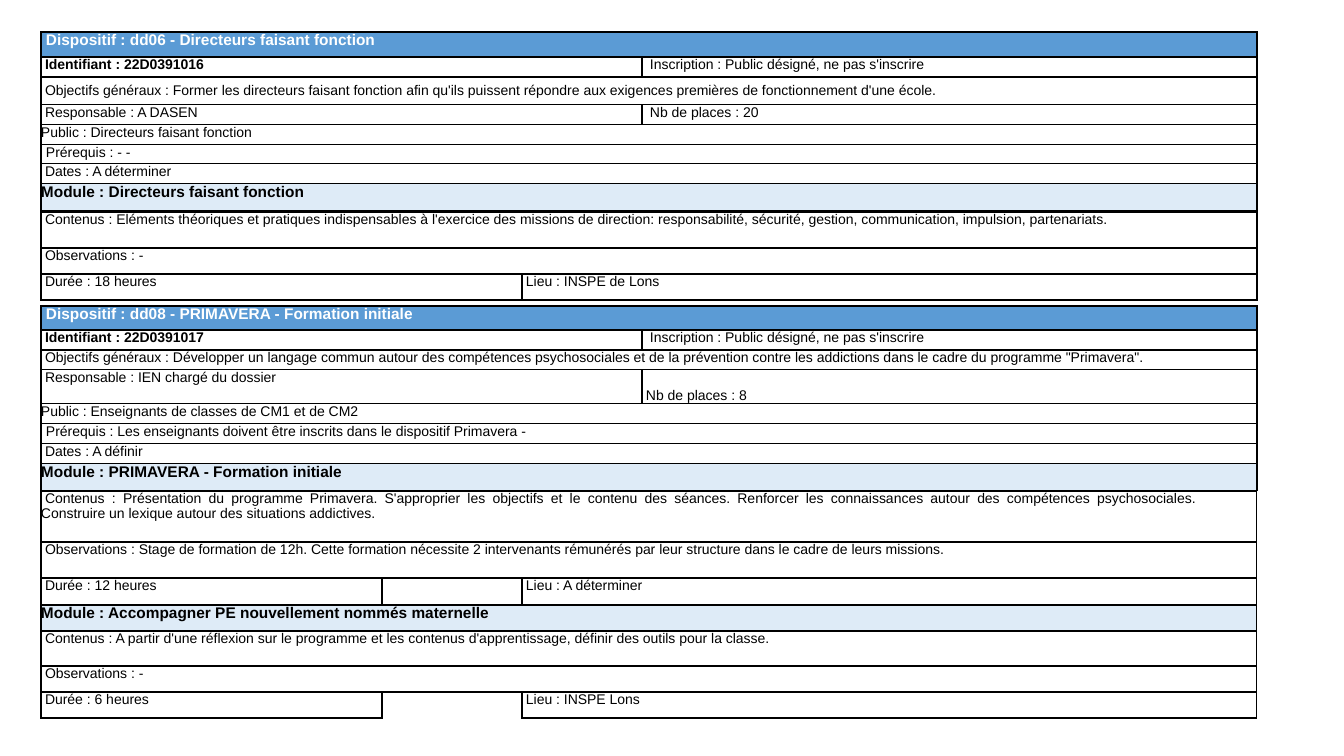
from lxml import etree
from pptx import Presentation
from pptx.dml.color import RGBColor
from pptx.enum.text import MSO_ANCHOR, PP_ALIGN
from pptx.oxml.ns import qn
from pptx.util import Pt

TOP, MIDDLE, BOTTOM = MSO_ANCHOR.TOP, MSO_ANCHOR.MIDDLE, MSO_ANCHOR.BOTTOM
LEFT, JUSTIFY = PP_ALIGN.LEFT, PP_ALIGN.JUSTIFY
EMU_PER_PX = 914400 / 100.8
HALVES = [601, 615]
PAIR = [481, 735]
TRIO = [341, 140, 735]


def px(length):
    """Turn whole pixels into EMU."""
    return round(length * EMU_PER_PX)


def color(value):
    """Turn a hex string into a colour."""
    return RGBColor.from_string(value)


def entry(text, **style):
    """Describe one cell by its text and format."""
    return {"text": text, **style}


def heading(text):
    """Describe the title bar of a course."""
    return entry(text, size=11, bold=True, ink="FFFFFF", fill="5B9BD5", left=5)


def module(text):
    """Describe the title bar of a module."""
    return entry(text, size=11, bold=True, fill="DEEBF7", left=0)


def content(text, **style):
    """Describe a long text whose first line is indented."""
    return entry(text, left=0, first=4, spacing=0.97, **style)


def write(frame, text, size=10, bold=False, ink="000000", font="Arial", left=4,
          first=0, right=0, align=LEFT, spacing=None):
    """Write one formatted paragraph into a text frame."""
    para = frame.paragraphs[0]
    para.alignment = align
    para.line_spacing = spacing
    properties = para._p.get_or_add_pPr()
    for name, length in (("marL", left), ("marR", right), ("indent", first)):
        properties.set(name, str(px(length)))
    if not text:
        etree.SubElement(para._p, qn("a:endParaRPr"), sz=str(size * 100))
        return
    span = para.add_run()
    span.text = text
    span.font.name = font
    span.font.size = Pt(size)
    span.font.bold = bold
    span.font.color.rgb = color(ink)


class Catalogue:
    """Draws course tables on the current slide."""

    line = "000000"
    line_width = Pt(1)

    def __init__(self, deck):
        """Add a blank slide to the deck."""
        self.page = deck.slides.add_slide(deck.slide_layouts[6])

    def border(self, cell, sides):
        """Draw the given sides of a cell."""
        properties = cell._tc.get_or_add_tcPr()
        for side in "LRTB":
            edge = etree.SubElement(properties, qn(f"a:ln{side}"), w=str(self.line_width))
            if side in sides:
                solid = etree.SubElement(edge, qn("a:solidFill"))
                etree.SubElement(solid, qn("a:srgbClr"), val=self.line)
            else:
                etree.SubElement(edge, qn("a:noFill"))

    def cell(self, cell, text="", fill=None, anchor=TOP, sides="LRTB", **style):
        """Fill one cell with its text, colour and borders."""
        cell.margin_left = cell.margin_right = cell.margin_top = cell.margin_bottom = 0
        cell.vertical_anchor = anchor
        self.border(cell, sides)
        if fill:
            cell.fill.solid()
            cell.fill.fore_color.rgb = color(fill)
        else:
            cell.fill.background()
        write(cell.text_frame, text, **style)

    def table(self, top, widths, rows):
        """Add a table; a row with a single entry spans every column."""
        height = sum(row[0] for row in rows)
        frame = self.page.shapes.add_table(
            len(rows), len(widths), px(41), px(top), px(sum(widths)), px(height))
        table = frame.table
        table.first_row = table.horz_banding = False
        for column, width in zip(table.columns, widths):
            column.width = px(width)
        for index, (row_height, *entries) in enumerate(rows):
            table.rows[index].height = px(row_height)
            if len(entries) == 1:
                table.cell(index, 0).merge(table.cell(index, len(widths) - 1))
                entries += [entry("")] * (len(widths) - 1)
            for column, values in enumerate(entries):
                self.cell(table.cell(index, column), **values)


def main():
    """Build the course catalogue page."""
    deck = Presentation()
    deck.slide_width, deck.slide_height = px(1344), px(756)
    catalogue = Catalogue(deck)
    enrolment = entry("Inscription : Public désigné, ne pas s'inscrire", left=8)

    catalogue.table(32, HALVES, [
        (25, heading("Dispositif : dd06 - Directeurs faisant fonction")),
        (20, entry("Identifiant : 22D0391016", bold=True), enrolment),
        (28, entry("Objectifs généraux : Former les directeurs faisant fonction afin qu'ils "
                   "puissent répondre aux exigences premières de fonctionnement d'une école.",
                   anchor=MIDDLE)),
        (20, entry("Responsable : A DASEN"), entry("Nb de places : 20", left=8)),
        (20, entry("Public : Directeurs faisant fonction", left=0)),
        (19, entry("Prérequis : - -", left=5)),
        (20, entry("Dates : A déterminer")),
        (27, module("Module : Directeurs faisant fonction")),
    ])
    catalogue.table(212, PAIR, [
        (36, content("Contenus : Eléments théoriques et pratiques indispensables à l'exercice "
                     "des missions de direction: responsabilité, sécurité, gestion, "
                     "communication, impulsion, partenariats.")),
        (26, entry("Observations : -")),
        (26, entry("Durée : 18 heures"), entry("Lieu : INSPE de Lons")),
    ])
    catalogue.table(306, HALVES, [
        (24, heading("Dispositif : dd08 - PRIMAVERA - Formation initiale")),
        (20, entry("Identifiant : 22D0391017", bold=True), enrolment),
        (20, entry("Objectifs généraux : Développer un langage commun autour des compétences "
                   "psychosociales et de la prévention contre les addictions dans le cadre "
                   "du programme \"Primavera\".")),
        (34, entry("Responsable : IEN chargé du dossier"),
         entry("Nb de places : 8", anchor=BOTTOM)),
        (20, entry("Public : Enseignants de classes de CM1 et de CM2", left=0)),
        (20, entry("Prérequis : Les enseignants doivent être inscrits dans le dispositif "
                   "Primavera -", left=5)),
        (20, entry("Dates : A définir")),
        (27, module("Module : PRIMAVERA - Formation initiale")),
    ])
    catalogue.table(491, TRIO, [
        (51, content("Contenus : Présentation du programme Primavera. S'approprier les objectifs "
                     "et le contenu des séances. Renforcer les connaissances autour des "
                     "compétences psychosociales. Construire un lexique autour des situations "
                     "addictives.", align=JUSTIFY, right=62)),
        (36, content("Observations : Stage de formation de 12h. Cette formation nécessite 2 "
                     "intervenants rémunérés par leur structure dans le cadre de leurs "
                     "missions.")),
        (27, entry("Durée : 12 heures"), entry(""), entry("Lieu : A déterminer")),
        (26, module("Module : Accompagner PE nouvellement nommés maternelle")),
    ])
    catalogue.table(631, TRIO, [
        (35, content("Contenus : A partir d'une réflexion sur le programme et les contenus "
                     "d'apprentissage, définir des outils pour la classe.")),
        (26, entry("Observations : -")),
        (26, entry("Durée : 6 heures"), entry("", sides="LRT"), entry("Lieu : INSPE Lons")),
    ])
    deck.save("out.pptx")


if __name__ == "__main__":
    main()
